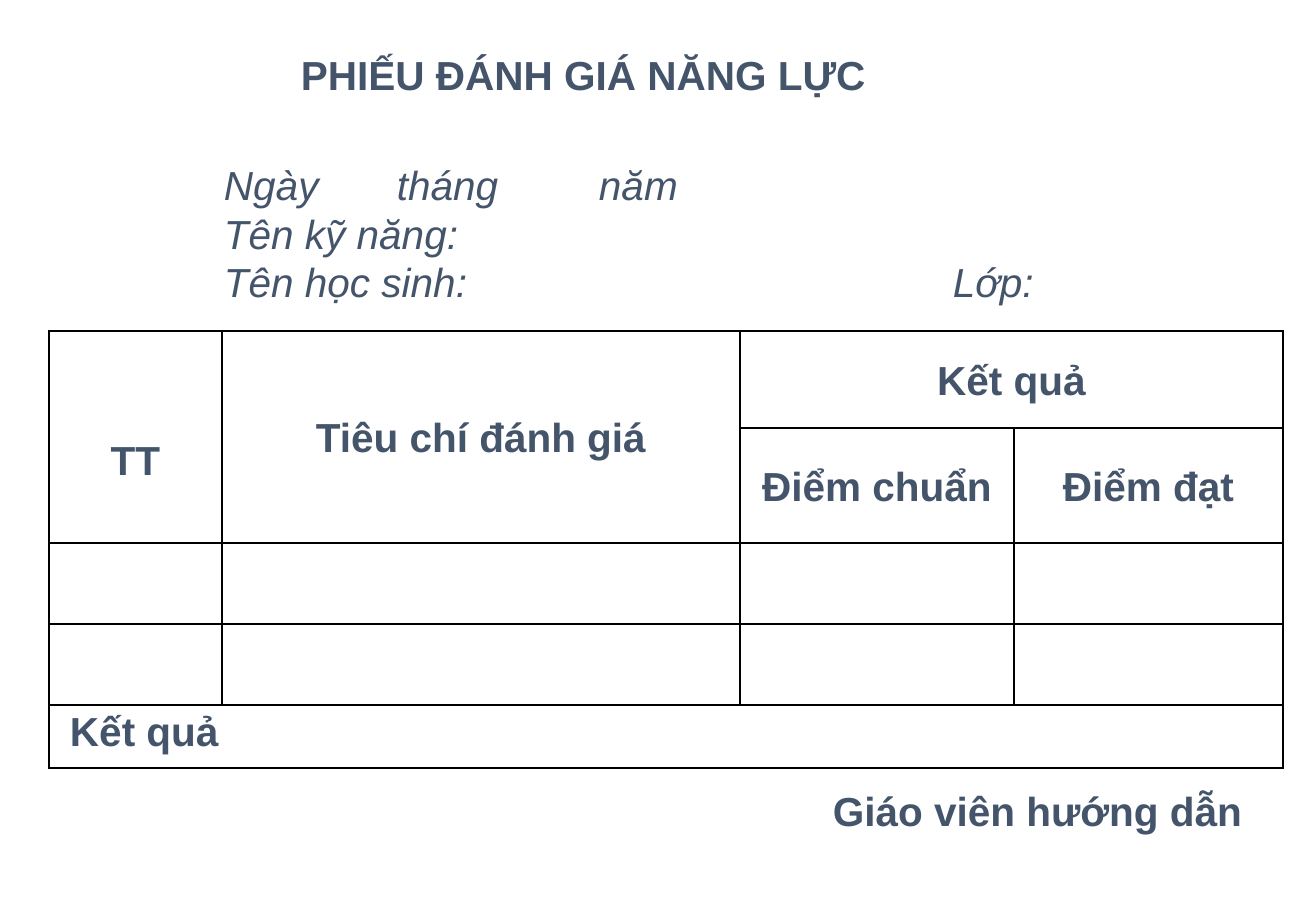
import dataclasses

import lxml.etree
import pptx
import pptx.dml.color
import pptx.enum.text
import pptx.oxml.ns
import pptx.util

ALIGN = pptx.enum.text.PP_ALIGN
ANCHOR = pptx.enum.text.MSO_ANCHOR


@dataclasses.dataclass(frozen=True)
class Theme:
    font: str = "Arial"
    size: int = 24
    line_height: float = 28.8
    ink: str = "44546A"
    border: str = "000000"
    border_width: int = 1


def px(length):
    return pptx.util.Emu(round(length * 914400 / 121.5))


def add_element(parent, tag, **attributes):
    return lxml.etree.SubElement(parent, pptx.oxml.ns.qn(tag), attributes)


class FormSlide:
    def __init__(self, presentation, theme):
        self.theme = theme
        self.slide = presentation.slides.add_slide(presentation.slide_layouts[6])

    def style(self, paragraph, bold=True, italic=False, align=ALIGN.LEFT):
        paragraph.alignment = align
        paragraph.line_spacing = pptx.util.Pt(self.theme.line_height)
        for run in paragraph.runs:
            run.font.name = self.theme.font
            run.font.size = pptx.util.Pt(self.theme.size)
            run.font.bold = bold
            run.font.italic = italic
            run.font.color.rgb = pptx.dml.color.RGBColor.from_string(self.theme.ink)

    def text(self, left, top, width, height, lines, tabs=(), **style):
        shape = self.slide.shapes.add_textbox(px(left), px(top), px(width), px(height))
        frame = shape.text_frame
        frame.word_wrap = True
        frame.margin_left = frame.margin_right = 0
        frame.margin_top = frame.margin_bottom = 0
        frame.text = "\n".join(lines)
        for paragraph in frame.paragraphs:
            if "\t" in paragraph.text:
                tab_list = add_element(paragraph._p.get_or_add_pPr(), "a:tabLst")
                for position in tabs:
                    add_element(tab_list, "a:tab", pos=str(px(position)), algn="l")
            self.style(paragraph, **style)

    def table(self, left, top, columns, rows):
        frame = self.slide.shapes.add_table(
            len(rows), len(columns), px(left), px(top), px(sum(columns)), px(sum(rows))
        )
        table = frame.table
        table.first_row = table.horz_banding = False
        for column, width in zip(table.columns, columns):
            column.width = px(width)
        for row, height in zip(table.rows, rows):
            row.height = px(height)
        for cell in table.iter_cells():
            self.border(cell)
            cell.fill.background()
        return table

    def border(self, cell):
        properties = cell._tc.get_or_add_tcPr()
        width = str(pptx.util.Pt(self.theme.border_width))
        for side in ("a:lnL", "a:lnR", "a:lnT", "a:lnB"):
            line = add_element(properties, side, w=width)
            add_element(add_element(line, "a:solidFill"), "a:srgbClr", val=self.theme.border)

    def cell(self, cell, text, anchor=ANCHOR.MIDDLE, left=10, top=5, align=ALIGN.CENTER):
        cell.text_frame.text = text
        cell.vertical_anchor = anchor
        cell.margin_left, cell.margin_right = px(left), px(10)
        cell.margin_top, cell.margin_bottom = px(top), px(5)
        self.style(cell.text_frame.paragraphs[0], align=align)


def main():
    presentation = pptx.Presentation()
    presentation.slide_width, presentation.slide_height = px(1316), px(911)
    form = FormSlide(presentation, Theme())

    form.text(301, 50, 800, 49, ["PHIẾU ĐÁNH GIÁ NĂNG LỰC"])
    form.text(
        224, 160, 850, 146,
        ["Ngày\ttháng\tnăm", "Tên kỹ năng:", "Tên học sinh:\t\t\tLớp:"],
        tabs=(173, 375, 682), bold=False, italic=True,
    )

    table = form.table(49, 331, (173, 518, 274, 269), (97, 115, 81, 81, 63))
    for first, last in (((0, 0), (1, 0)), ((0, 1), (1, 1)), ((0, 2), (0, 3)), ((4, 0), (4, 3))):
        table.cell(*first).merge(table.cell(*last))
    form.cell(table.cell(0, 0), "TT", top=50)
    form.cell(table.cell(0, 1), "Tiêu chí đánh giá")
    form.cell(table.cell(0, 2), "Kết quả")
    form.cell(table.cell(1, 2), "Điểm chuẩn")
    form.cell(table.cell(1, 3), "Điểm đạt")
    form.cell(table.cell(4, 0), "Kết quả", ANCHOR.TOP, left=21, top=2, align=ALIGN.LEFT)

    form.text(833, 786, 422, 49, ["Giáo viên hướng dẫn"], align=ALIGN.JUSTIFY)
    presentation.save("out.pptx")


if __name__ == "__main__":
    main()
